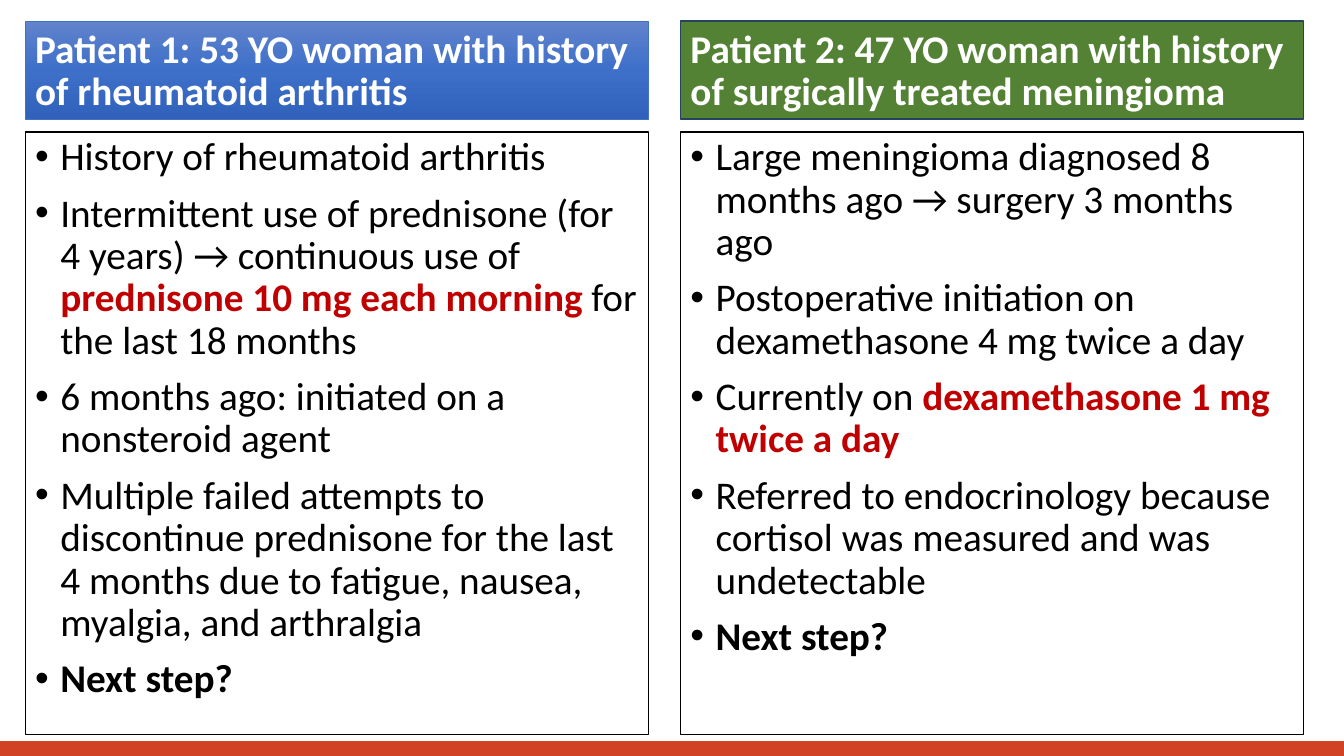
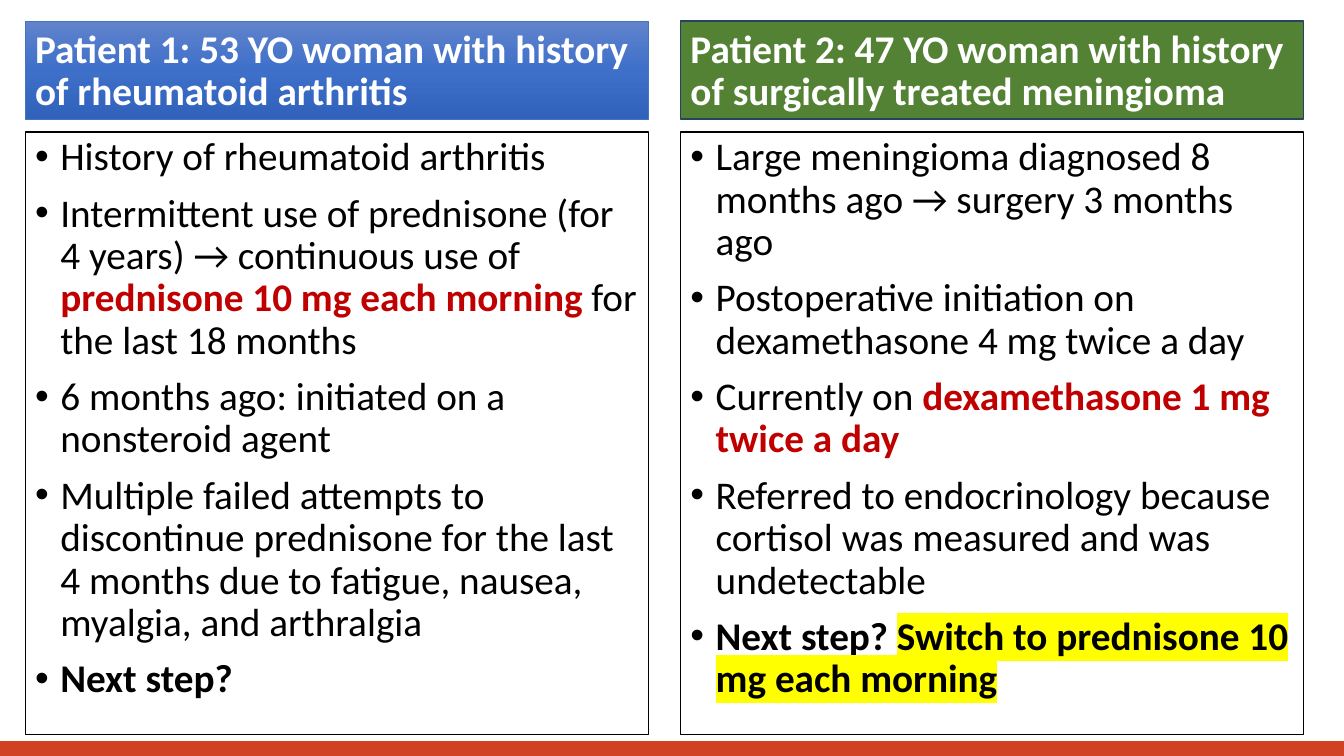
from copy import deepcopy
from dataclasses import dataclass

from lxml.etree import SubElement
from pptx import Presentation
from pptx.dml.color import RGBColor
from pptx.enum.shapes import MSO_SHAPE as Shape
from pptx.enum.text import MSO_ANCHOR as Anchor, PP_ALIGN as Align
from pptx.oxml.ns import qn
from pptx.util import Inches, Pt


@dataclass(frozen=True)
class Theme:
    font: str = "Calibri"
    text_size: int = 28
    space_before: int = 10
    line_spacing: float = 0.9
    white: str = "FFFFFF"
    black: str = "000000"
    band: str = "D14224"
    blue: tuple = ("6183CB", "3E70CA", "3062BB")
    blue_line: str = "4472C4"
    green: str = "548235"
    green_line: str = "28445D"
    dose: str = "C00000"
    answer: str = "FFFF00"


THEME = Theme()
SLIDE_W, SLIDE_H = 13.33, 7.5
BAND_H = 0.14
COLUMN_LEFTS = (0.25, 6.75)
COLUMN_W = 6.18
HEADER_TOP, HEADER_H = 0.21, 0.97
BODY_TOP, BODY_H = 1.31, 5.98
INDENT = 0.25

PLAIN, DOSE, BOLD, ANSWER = "plain", "dose", "bold", "answer"

ARTHRITIS = [
    [("History of rheumatoid arthritis", PLAIN)],
    [("Intermittent use of prednisone (for 4 years) → continuous use of ", PLAIN),
     ("prednisone 10 mg each morning ", DOSE),
     ("for the last 18 months", PLAIN)],
    [("6 months ago: initiated on a nonsteroid agent", PLAIN)],
    [("Multiple failed attempts to discontinue prednisone for the last 4 months "
      "due to fatigue, nausea, myalgia, and arthralgia", PLAIN)],
    [("Next step?", BOLD)],
]
MENINGIOMA = [
    [("Large meningioma diagnosed 8 months ago → surgery 3 months ago", PLAIN)],
    [("Postoperative initiation on dexamethasone 4 mg twice a day", PLAIN)],
    [("Currently on ", PLAIN), ("dexamethasone 1 mg twice a day", DOSE)],
    [("Referred to endocrinology because cortisol was measured and was "
      "undetectable", PLAIN)],
]
QUESTION = [("Next step?", BOLD)]
QUESTION_ANSWERED = [("Next step? ", BOLD),
                     ("Switch to prednisone 10 mg each morning", ANSWER)]


def rgb(value):
    return RGBColor.from_string(value)


def fill_gradient(fill, shape, colors):
    """Fill from top to bottom with three evenly spaced colours."""
    fill.gradient()
    fill.gradient_angle = 270
    stop_list = shape.element.spPr.find(qn("a:gradFill")).find(qn("a:gsLst"))
    stop_list.insert(1, deepcopy(stop_list[0]))
    for index, (stop, color) in enumerate(zip(fill.gradient_stops, colors)):
        stop.color.rgb = rgb(color)
        stop.position = index / (len(colors) - 1)


def add_box(slide, left, top, width, height, fill, line, line_width=1):
    box = slide.shapes.add_shape(Shape.RECTANGLE, Inches(left), Inches(top),
                                 Inches(width), Inches(height))
    box.shadow.inherit = False
    if isinstance(fill, tuple):
        fill_gradient(box.fill, box, fill)
    else:
        box.fill.solid()
        box.fill.fore_color.rgb = rgb(fill)
    box.line.color.rgb = rgb(line)
    box.line.width = Pt(line_width)
    box.text_frame.word_wrap = True
    return box


def style_paragraph(paragraph, color, bold=False):
    paragraph.alignment = Align.LEFT
    paragraph.line_spacing = THEME.line_spacing
    font = paragraph.font
    font.name = THEME.font
    font.size = Pt(THEME.text_size)
    font.color.rgb = rgb(color)
    font.bold = bold


def add_bullet(paragraph):
    properties = paragraph._p.get_or_add_pPr()
    properties.set("marL", str(Inches(INDENT)))
    properties.set("indent", str(-Inches(INDENT)))
    SubElement(properties, qn("a:buFont"), typeface="Arial")
    SubElement(properties, qn("a:buChar"), char="•")


def add_run(paragraph, text, style):
    run = paragraph.add_run()
    run.text = text
    if style != PLAIN:
        run.font.bold = True
    if style == DOSE:
        run.font.color.rgb = rgb(THEME.dose)
    elif style == ANSWER:
        highlight = SubElement(run.font._element, qn("a:highlight"))
        SubElement(highlight, qn("a:srgbClr"), val=THEME.answer)


def add_header(slide, left, text, fill, line, line_width):
    header = add_box(slide, left, HEADER_TOP, COLUMN_W, HEADER_H,
                     fill, line, line_width)
    header.text_frame.vertical_anchor = Anchor.BOTTOM
    title = header.text_frame.paragraphs[0]
    title.text = text
    style_paragraph(title, THEME.white, bold=True)


def add_history(slide, left, points):
    frame = add_box(slide, left, BODY_TOP, COLUMN_W, BODY_H,
                    THEME.white, THEME.black).text_frame
    frame.vertical_anchor = Anchor.TOP
    for index, runs in enumerate(points):
        paragraph = frame.add_paragraph() if index else frame.paragraphs[0]
        add_bullet(paragraph)
        style_paragraph(paragraph, THEME.black)
        if index:
            paragraph.space_before = Pt(THEME.space_before)
        for text, style in runs:
            add_run(paragraph, text, style)


def add_patients_slide(deck, last_point):
    """Compare both patients; last_point closes the second history."""
    slide = deck.slides.add_slide(deck.slide_layouts[6])
    add_box(slide, 0, SLIDE_H - BAND_H, SLIDE_W, BAND_H, THEME.band, THEME.band)
    patients = (
        ("Patient 1: 53 YO woman with history of rheumatoid arthritis",
         THEME.blue, THEME.blue_line, 0.5, ARTHRITIS),
        ("Patient 2: 47 YO woman with history of surgically treated meningioma",
         THEME.green, THEME.green_line, 1, MENINGIOMA + [last_point]),
    )
    for left, (title, fill, line, line_width, points) in zip(COLUMN_LEFTS, patients):
        add_header(slide, left, title, fill, line, line_width)
        add_history(slide, left, points)


def main():
    deck = Presentation()
    deck.slide_width = Inches(SLIDE_W)
    deck.slide_height = Inches(SLIDE_H)
    for last_point in (QUESTION, QUESTION_ANSWERED):
        add_patients_slide(deck, last_point)
    deck.save("out.pptx")


if __name__ == "__main__":
    main()
